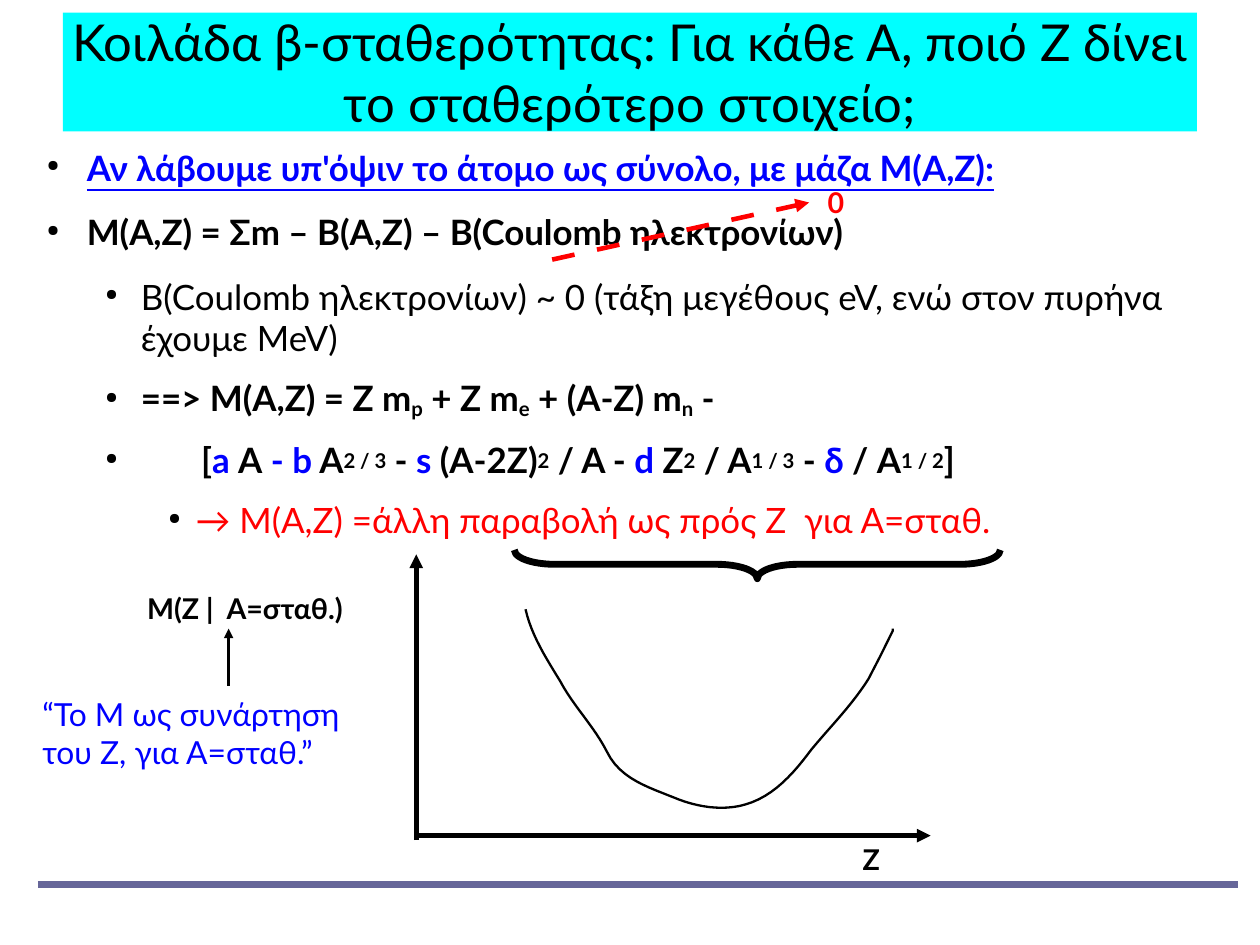
from pptx import Presentation
from pptx.dml.color import RGBColor
from pptx.enum.shapes import MSO_CONNECTOR, MSO_SHAPE
from pptx.enum.text import MSO_ANCHOR, PP_ALIGN
from pptx.oxml.ns import qn
from pptx.util import Cm, Pt
from lxml.etree import SubElement

BLACK, BLUE, RED, CYAN, SLATE = "000000", "0000FF", "FF0000", "00FFFF", "666699"
SUB, SUP = -14000, 14000


def rgb(color):
    return RGBColor.from_string(color)


def add_run(paragraph, text, size, color, bold=False):
    run = paragraph.add_run()
    run.text = text
    run.font.name = "Lato"
    run.font.size = Pt(size)
    run.font.bold = bold
    run.font.color.rgb = rgb(color)
    return run


prs = Presentation()
prs.slide_width, prs.slide_height = Cm(28), Cm(21)
slide = prs.slides.add_slide(prs.slide_layouts[6])
shapes = slide.shapes

# Title band
title = shapes.add_shape(MSO_SHAPE.RECTANGLE, Cm(1.4), Cm(0.28), Cm(25.2), Cm(2.64))
title.shadow.inherit = False
title.fill.solid()
title.fill.fore_color.rgb = rgb(CYAN)
title.line.fill.background()
frame = title.text_frame
frame.word_wrap = True
frame.vertical_anchor = MSO_ANCHOR.MIDDLE
frame.margin_left = frame.margin_right = frame.margin_top = frame.margin_bottom = 0
frame.paragraphs[0].alignment = PP_ALIGN.CENTER
add_run(frame.paragraphs[0],
        "Κοιλάδα β-σταθερότητας: Για κάθε Α, ποιό Ζ δίνει το σταθερότερο στοιχείο;", 32, BLACK)

# Bullets: level, text indent, bullet offset, space after, bold, runs (text, colour, baseline)
bullets = [
    (0, 1.19, -0.89, 14.2, True,
     [("Αν λάβουμε υπ'όψιν το άτομο ως σύνολο, με μάζα Μ(Α,Ζ):", BLUE, 0)]),
    (0, 1.19, -0.89, 14.2, True,
     [("M(A,Z) = Σm – B(A,Z) – B(Coulomb ηλεκτρονίων)", BLACK, 0)]),
    (1, 2.39, -0.79, 11.3, False,
     [("B(Coulomb ηλεκτρονίων) ~ 0 (τάξη μεγέθους eV, ενώ στον πυρήνα έχουμε MeV)", BLACK, 0)]),
    (1, 2.39, -0.79, 11.3, True,
     [("==> M(A,Z) = Z m", BLACK, 0), ("p", BLACK, SUB), (" + Z m", BLACK, 0),
      ("e", BLACK, SUB), (" + (A-Z) m", BLACK, 0), ("n", BLACK, SUB), (" -", BLACK, 0)]),
    (1, 3.73, -2.13, 11.3, True,
     [("[", BLACK, 0), ("a ", BLUE, 0), ("A", BLACK, 0), (" - b", BLUE, 0),
      (" A", BLACK, 0), ("2 / 3", BLACK, SUP), (" - ", BLACK, 0), ("s", BLUE, 0),
      (" (Α-2Z)", BLACK, 0), ("2", BLACK, SUP), (" / A - ", BLACK, 0), ("d", BLUE, 0),
      (" Z", BLACK, 0), ("2", BLACK, SUP), (" / A", BLACK, 0), ("1 / 3", BLACK, SUP),
      (" - ", BLACK, 0), ("δ", BLUE, 0), (" / A", BLACK, 0), ("1 / 2", BLACK, SUP),
      ("]", BLACK, 0)]),
    (2, 3.61, -0.61, 8.5, False,
     [("→ M(A,Z) =άλλη παραβολή ως πρός Ζ  για Α=σταθ.", RED, 0)]),
]
body = shapes.add_textbox(Cm(0.74), Cm(3.25), Cm(26.67), Cm(15.88)).text_frame
body.word_wrap = True
body.margin_left = body.margin_right = body.margin_top = body.margin_bottom = 0
for index, (level, indent, offset, after, bold, runs) in enumerate(bullets):
    paragraph = body.add_paragraph() if index else body.paragraphs[0]
    props = paragraph._p.get_or_add_pPr()
    props.set("marL", str(Cm(indent)))
    props.set("indent", str(Cm(offset)))
    bullet_color = SubElement(props, qn("a:buClr"))
    SubElement(bullet_color, qn("a:srgbClr"), val=BLACK)
    SubElement(props, qn("a:buSzPct"), val="45000")
    SubElement(props, qn("a:buChar"), char="●")
    paragraph.level = level
    paragraph.space_after = Pt(after)
    for text, color, baseline in runs:
        run = add_run(paragraph, text, 22, color, bold)
        run.font.underline = index == 0
        if baseline:
            run._r.get_or_add_rPr().set("baseline", str(baseline))

# Footer rule, cancelling arrow, axes and pointer: ends, colour, weight, dashed, arrow
lines = [
    (0.84, 19.66, 27.51, 19.66, SLATE, 4.31, False, False),
    (12.27, 5.77, 17.98, 4.5, RED, 2.89, True, True),
    (9.25, 18.67, 9.25, 12.32, BLACK, 2.89, False, True),
    (9.25, 18.57, 20.68, 18.57, BLACK, 2.89, False, True),
    (5.08, 15.24, 5.08, 13.97, BLACK, 1.45, False, True),
]
for x1, y1, x2, y2, color, weight, dashed, arrow in lines:
    line = shapes.add_connector(MSO_CONNECTOR.STRAIGHT, Cm(x1), Cm(y1), Cm(x2), Cm(y2))
    line.line.color.rgb = rgb(color)
    line.line.width = Pt(weight)
    outline = line.line._get_or_add_ln()
    if dashed:
        dashes = SubElement(outline, qn("a:custDash"))
        SubElement(dashes, qn("a:ds"), d="500000", sp="500000")
    if arrow:
        SubElement(outline, qn("a:tailEnd"), type="triangle")
    SubElement(line._element.spPr, qn("a:effectLst"))

# Labels
labels = [
    ("0", 18.14, 3.99, 0.89, 0.99, 18, RED, True),
    ("Μ(Ζ |  Α=σταθ.)", 3.02, 13, 6.35, 0.99, 18, BLACK, True),
    ("Ζ", 18.92, 18.59, 6.35, 0.99, 18, BLACK, True),
    ("“Το Μ ως συνάρτηση του Ζ, για Α=σταθ.”", 0.69, 15.32, 7.62, 2.74, 20, BLUE, False),
]
for text, left, top, width, height, size, color, bold in labels:
    label = shapes.add_textbox(Cm(left), Cm(top), Cm(width), Cm(height)).text_frame
    label.word_wrap = True
    add_run(label.paragraphs[0], text, size, color, bold)

# Brace under the parabola statement
brace = shapes.add_shape(MSO_SHAPE.LEFT_BRACE, Cm(16.51), Cm(7.14), Cm(0.64), Cm(10.8))
brace.rotation = 270
brace.adjustments[0] = 1.4
brace.shadow.inherit = False
brace.fill.background()
brace.line.color.rgb = rgb(BLACK)
brace.line.width = Pt(4.31)

# Mass parabola: cubic segments as two control points and an end point
start = (11.68, 13.54)
segments = [
    ((11.81, 14.12), (12.14, 14.63), (12.45, 15.14)),
    ((12.75, 15.7), (13.21, 16.15), (13.49, 16.71)),
    ((13.79, 17.32), (14.43, 17.5), (14.99, 17.73)),
    ((15.47, 17.93), (16.05, 18.03), (16.56, 17.88)),
    ((17.2, 17.7), (17.65, 17.17), (18.03, 16.66)),
    ((18.47, 16.13), (18.95, 15.65), (19.3, 15.09)),
]
STEPS = 12
curve_points = []
knot = start
for control1, control2, end in segments:
    for step in range(1, STEPS + 1):
        t = step / STEPS
        weights = ((1 - t) ** 3, 3 * t * (1 - t) ** 2, 3 * t ** 2 * (1 - t), t ** 3)
        corners = (knot, control1, control2, end)
        curve_points.append(tuple(
            Cm(sum(w * corner[axis] for w, corner in zip(weights, corners)))
            for axis in (0, 1)))
    knot = end
curve_points += [(Cm(x), Cm(y)) for x, y in ((19.58, 14.55), (19.84, 14.02), (19.84, 13.97))]
builder = shapes.build_freeform(Cm(start[0]), Cm(start[1]))
builder.add_line_segments(curve_points, close=False)
parabola = builder.convert_to_shape()
parabola.shadow.inherit = False
parabola.fill.background()
parabola.line.color.rgb = rgb(BLACK)
parabola.line.width = Pt(1.45)

prs.save("out.pptx")
